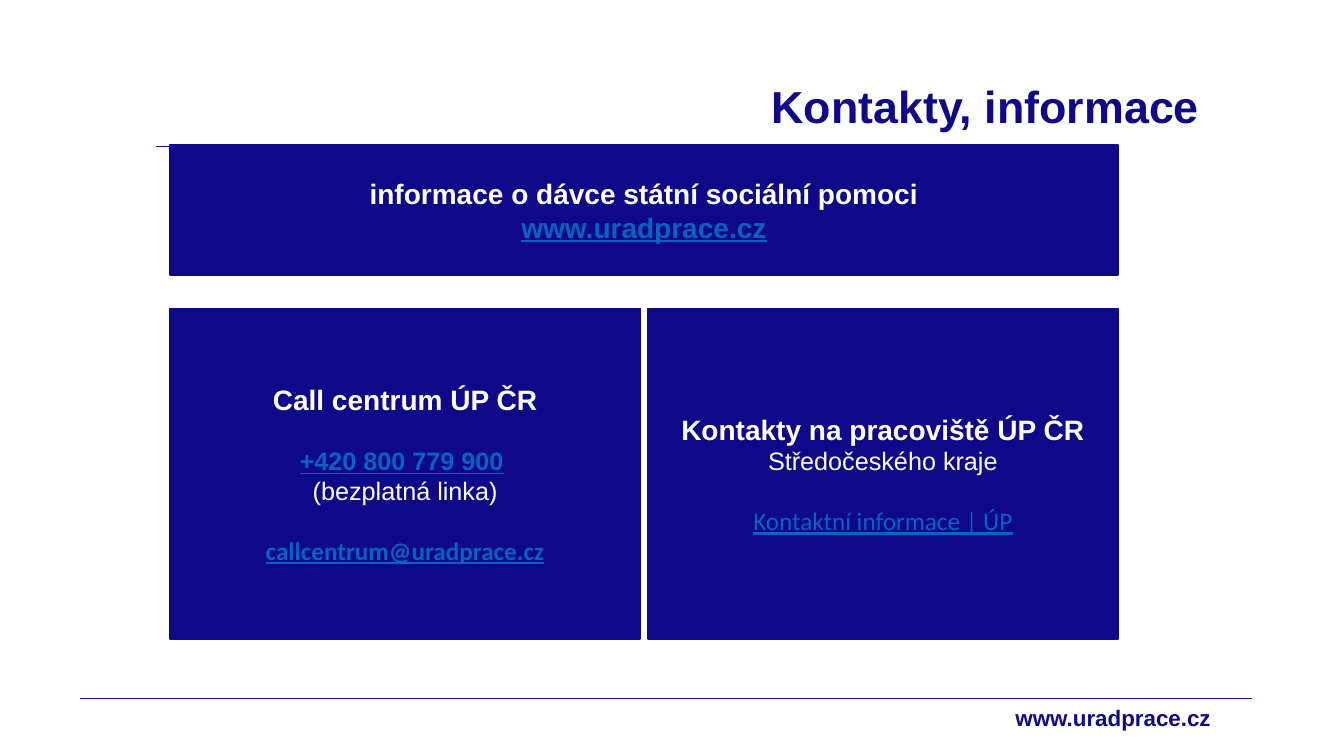
from dataclasses import dataclass
from typing import NamedTuple

from lxml.etree import SubElement
from pptx import Presentation
from pptx.dml.color import RGBColor
from pptx.enum.shapes import MSO_CONNECTOR, MSO_SHAPE
from pptx.enum.text import MSO_ANCHOR, MSO_AUTO_SIZE, PP_ALIGN
from pptx.oxml.ns import qn
from pptx.slide import Slide
from pptx.text.text import TextFrame
from pptx.util import Pt


@dataclass(frozen=True)
class Theme:
    navy: RGBColor = RGBColor(0x0F, 0x08, 0x88)
    white: RGBColor = RGBColor(0xFF, 0xFF, 0xFF)
    link: RGBColor = RGBColor(0x05, 0x63, 0xC1)
    font: str = "Arial"
    link_font: str = "Calibri"
    title: float = 32
    heading: float = 20
    body: float = 18
    footer: float = 16
    line: float = 1


THEME = Theme()


class Box(NamedTuple):
    left: float
    top: float
    width: float
    height: float


class Run(NamedTuple):
    text: str
    size: float
    color: RGBColor = THEME.white
    bold: bool = True
    underline: bool = False
    font: str = THEME.font


class Para(NamedTuple):
    runs: tuple[Run, ...]
    before: float = 0


class Panel(NamedTuple):
    box: Box
    paras: tuple[Para, ...]


class Rule(NamedTuple):
    left: float
    right: float
    y: float


def link(text: str, size: float, bold: bool = True, font: str = THEME.font) -> Run:
    return Run(text, size, THEME.link, bold, True, font)


LEFT, WIDTH, GAP = 121.5, 677, 5.5
HALF = (WIDTH - GAP) / 2
LOWER_TOP, LOWER_HEIGHT = 220.5, 236
BLOCK_GAP = 21

PANELS = (
    Panel(Box(LEFT, 103.5, WIDTH, 93), (
        Para((Run("informace o dávce státní sociální pomoci", THEME.heading),)),
        Para((link("www.uradprace.cz", THEME.heading),)),
    )),
    Panel(Box(LEFT, LOWER_TOP, HALF, LOWER_HEIGHT), (
        Para((Run("Call centrum ÚP ČR", THEME.heading),)),
        Para((link("+420 800 779 900", THEME.body), Run(" ", THEME.body)), BLOCK_GAP),
        Para((Run("(bezplatná linka)", THEME.body, bold=False),)),
        Para((link("callcentrum@uradprace.cz", THEME.body, font=THEME.link_font),), BLOCK_GAP),
    )),
    Panel(Box(LEFT + HALF + GAP, LOWER_TOP, HALF, LOWER_HEIGHT), (
        Para((Run("Kontakty na pracoviště ÚP ČR", THEME.heading),)),
        Para((Run("Středočeského kraje", THEME.body, bold=False),)),
        Para((link("Kontaktní informace | ÚP", THEME.body, False, THEME.link_font),), BLOCK_GAP),
    )),
)
RULES = (Rule(57.5, 894, 499), Rule(111.5, 281.5, 104.5))
TITLE_BOX = Box(104.5, 50.5, 759.5, 54)
FOOTER_BOX = Box(350.5, 499, 521.5, 27.5)


def fill_text(tf: TextFrame, paras: tuple[Para, ...], align: PP_ALIGN) -> None:
    tf.word_wrap = True
    tf.auto_size = MSO_AUTO_SIZE.NONE
    tf.vertical_anchor = MSO_ANCHOR.MIDDLE
    for i, para in enumerate(paras):
        p = tf.add_paragraph() if i else tf.paragraphs[0]
        p.alignment = align
        if para.before:
            p.space_before = Pt(para.before)
        for run in para.runs:
            r = p.add_run()
            r.text = run.text
            r.font.name = run.font
            r.font.size = Pt(run.size)
            r.font.bold = run.bold
            r.font.underline = run.underline
            r.font.color.rgb = run.color


def add_rule(s: Slide, rule: Rule) -> None:
    sp = s.shapes.add_connector(
        MSO_CONNECTOR.STRAIGHT, Pt(rule.left), Pt(rule.y), Pt(rule.right), Pt(rule.y))
    sp.line.color.rgb = THEME.navy
    sp.line.width = Pt(THEME.line)
    SubElement(sp._element.spPr, qn("a:effectLst"))


def add_panel(s: Slide, panel: Panel) -> None:
    sp = s.shapes.add_shape(MSO_SHAPE.RECTANGLE, *map(Pt, panel.box))
    sp.shadow.inherit = False
    sp.fill.solid()
    sp.fill.fore_color.rgb = THEME.navy
    sp.line.color.rgb = THEME.navy
    sp.line.width = Pt(THEME.line)
    fill_text(sp.text_frame, panel.paras, PP_ALIGN.CENTER)


def set_title(s: Slide, text: str) -> None:
    sp = s.shapes.title
    sp.left, sp.top, sp.width, sp.height = map(Pt, TITLE_BOX)
    fill_text(sp.text_frame, (Para((Run(text, THEME.title, THEME.navy),)),), PP_ALIGN.RIGHT)
    sp.text_frame.paragraphs[0].line_spacing = 0.9


def add_footer(s: Slide, text: str) -> None:
    sp = s.shapes.add_textbox(*map(Pt, FOOTER_BOX))
    fill_text(sp.text_frame, (Para((Run(text, THEME.footer, THEME.navy),)),), PP_ALIGN.RIGHT)


def main() -> None:
    prs = Presentation()
    prs.slide_width, prs.slide_height = Pt(960), Pt(540)
    s = prs.slides.add_slide(prs.slide_layouts.get_by_name("Title Only"))
    set_title(s, "Kontakty, informace")
    add_footer(s, "www.uradprace.cz")
    for rule in RULES:
        add_rule(s, rule)
    for panel in PANELS:
        add_panel(s, panel)
    prs.save("out.pptx")


if __name__ == "__main__":
    main()
